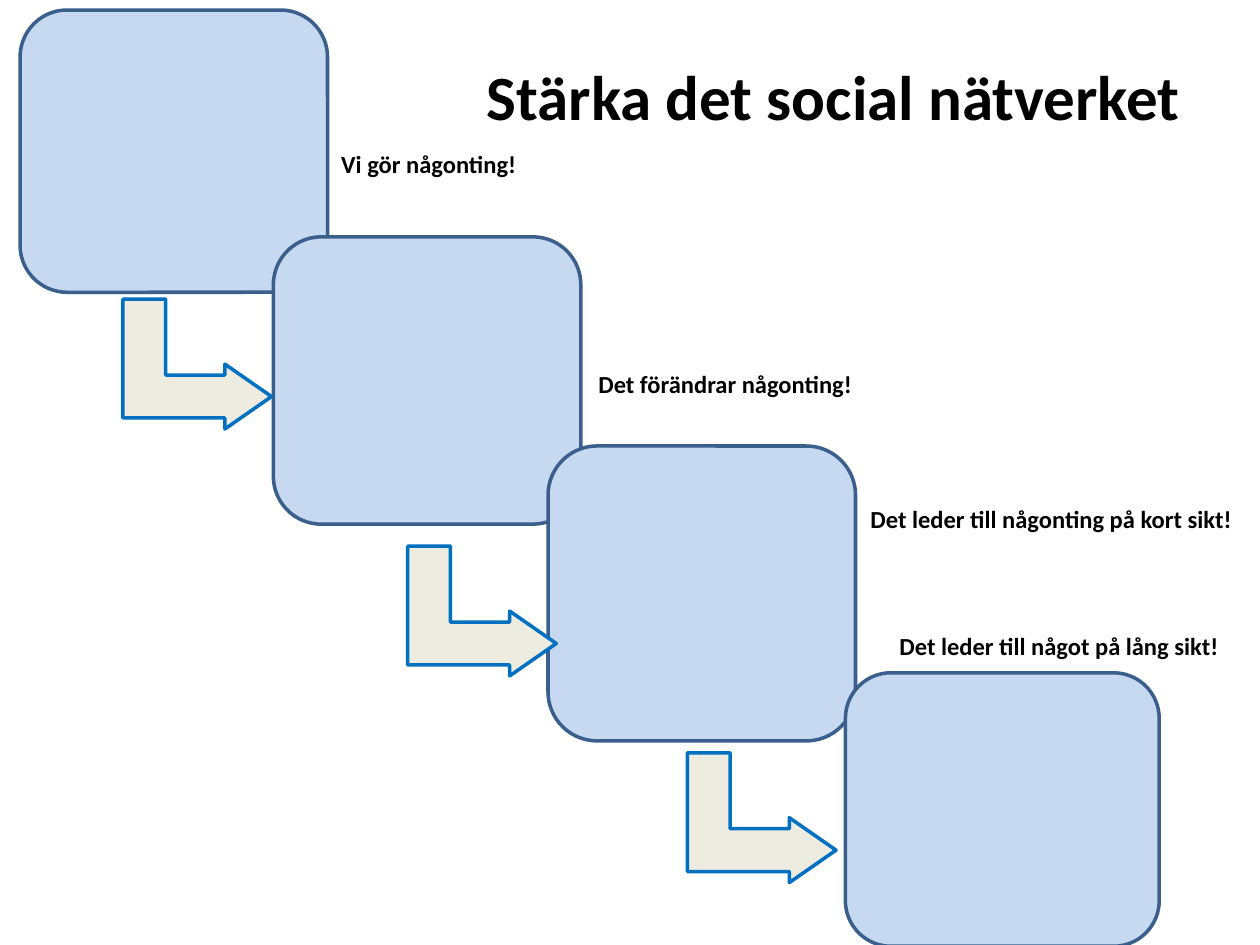
from pptx import Presentation
from pptx.dml.color import RGBColor
from pptx.enum import shapes, text
from pptx.util import Inches, Pt


def paint(shape, fill, line):
    shape.shadow.inherit = False
    shape.fill.solid()
    shape.fill.fore_color.rgb = RGBColor.from_string(fill)
    shape.line.color.rgb = RGBColor.from_string(line)
    shape.line.width = Pt(2)


def label(words, size, left, top, width, height):
    box = slide.shapes.add_textbox(Inches(left), Inches(top), Inches(width), Inches(height))
    frame = box.text_frame
    frame.word_wrap = True
    frame.vertical_anchor = text.MSO_ANCHOR.MIDDLE
    frame.margin_left = frame.margin_top = frame.margin_bottom = Inches(0.1)
    frame.margin_right = Inches(0)
    para = frame.paragraphs[0]
    para.text = words
    para.font.name = "Calibri"
    para.font.size = Pt(size)
    para.font.bold = True
    para.font.color.rgb = RGBColor.from_string("000000")
    return para


deck = Presentation()
deck.slide_width, deck.slide_height = Inches(10), Inches(7.5)
slide = deck.slides.add_slide(deck.slide_layouts[6])

title = label("Stärka det social nätverket", 36, 3.63, 0.13, 5.87, 1.25)
title.alignment = text.PP_ALIGN.CENTER

steps = [
    (0.16, 0.08, 2.44, 2.24),
    (2.17, 1.88, 2.44, 2.28),
    (4.35, 3.54, 2.44, 2.34),
    (6.71, 5.34, 2.49, 2.17),
]
for step in steps:
    card = slide.shapes.add_shape(
        shapes.MSO_SHAPE.ROUNDED_RECTANGLE, *map(Inches, step))
    paint(card, "C6D9F1", "3A5F8C")

for left, top in [(1.05, 2.3), (3.31, 4.26), (5.53, 5.9)]:
    arrow = slide.shapes.add_shape(
        shapes.MSO_SHAPE.BENT_UP_ARROW, Inches(left), Inches(top), Inches(1.03), Inches(1.18))
    arrow.rotation = 90
    for i, ratio in enumerate([0.33, 0.25, 0.36]):
        arrow.adjustments[i] = ratio
    paint(arrow, "EEECE1", "0070C0")

notes = [
    ("Vi gör någonting!", 2.61, 1.15, 1.69, 0.33),
    ("Det förändrar någonting!", 4.65, 2.57, 2.61, 0.98),
    ("Det leder till någonting på kort sikt!", 6.81, 3.64, 3.06, 0.98),
    ("Det leder till något på lång sikt!", 7.04, 4.65, 2.9, 0.98),
]
for words, *place in notes:
    label(words, 14, *place).line_spacing = 0.9

deck.save("out.pptx")
